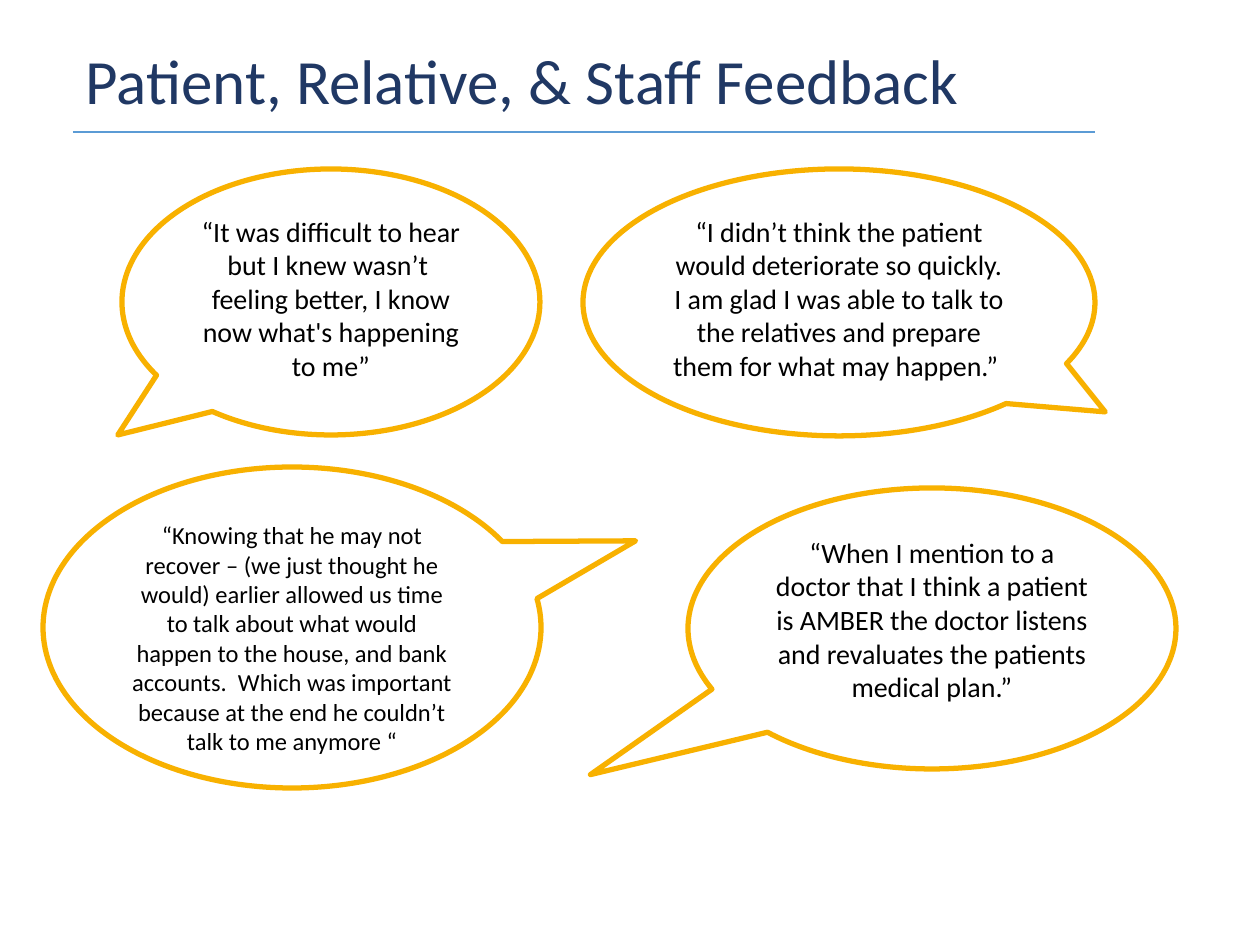
from dataclasses import dataclass

from lxml import etree
from pptx import Presentation
from pptx.dml.color import RGBColor
from pptx.enum.shapes import MSO_CONNECTOR, MSO_SHAPE
from pptx.enum.text import MSO_ANCHOR, PP_ALIGN
from pptx.oxml.ns import qn
from pptx.slide import Slide
from pptx.util import Emu, Pt

STRAIGHT = MSO_CONNECTOR.STRAIGHT
CALLOUT = MSO_SHAPE.OVAL_CALLOUT
TOP, MIDDLE = MSO_ANCHOR.TOP, MSO_ANCHOR.MIDDLE
LEFT, CENTER = PP_ALIGN.LEFT, PP_ALIGN.CENTER
PX_PER_INCH = 126
COLORS = {
    "white": "FFFFFF",
    "navy": "203864",
    "amber": "F8B100",
    "blue": "5B9BD5",
    "black": "000000",
}
FEEDBACK = [
    ((122, 169, 418, 266), (-0.51, 0.5), 16, [
        "“It was difficult to hear but I knew wasn’t  feeling better, "
        "I know now what's happening to me”",
    ]),
    ((688, 488, 488, 281), (-0.7, 0.52), 16, [
        "“When I mention to a doctor that I think a patient is AMBER "
        "the doctor listens and revaluates the patients medical plan.”",
    ]),
    ((583, 169, 512, 267), (0.52, 0.41), 16, [
        "“I didn’t think the patient would deteriorate so quickly.",
        "I am glad I was able to talk to the relatives and prepare "
        "them for what may happen.” ",
    ]),
    ((43, 467, 498, 321), (0.69, -0.27), 14, [
        "“Knowing that he may not recover – (we just thought he would) "
        "earlier allowed us time to talk about what would happen to the "
        "house, and bank accounts.  Which was important because at the "
        "end he couldn’t talk to me anymore “",
    ]),
]


def px(length):
    return Emu(round(length * 914400 / PX_PER_INCH))


def color(name):
    return RGBColor.from_string(COLORS[name])


@dataclass
class FeedbackPage:
    """Draws the feedback slide's elements in one shared style."""

    page: Slide
    font: str = "Calibri"

    def set_text(self, shape, lines, size, ink, align, anchor, spacing=None):
        frame = shape.text_frame
        frame.word_wrap = True
        frame.vertical_anchor = anchor
        frame.text = "\n".join(lines)
        for paragraph in frame.paragraphs:
            paragraph.alignment = align
            paragraph.line_spacing = spacing
            paragraph.font.name = self.font
            paragraph.font.size = Pt(size)
            paragraph.font.color.rgb = color(ink)

    def title(self, bounds, text):
        box = self.page.shapes.add_textbox(*map(px, bounds))
        self.set_text(box, [text], 36, "navy", LEFT, MIDDLE, 0.9)

    def rule(self, left, right, top):
        line = self.page.shapes.add_connector(
            STRAIGHT, px(left), px(top), px(right), px(top))
        line.line.color.rgb = color("blue")
        line.line.width = Pt(1.5)
        etree.SubElement(line._element.spPr, qn("a:effectLst"))

    def bubble(self, bounds, tail, size, lines):
        shape = self.page.shapes.add_shape(CALLOUT, *map(px, bounds))
        for index, offset in enumerate(tail):
            shape.adjustments[index] = offset
        shape.shadow.inherit = False
        shape.fill.solid()
        shape.fill.fore_color.rgb = color("white")
        shape.line.color.rgb = color("amber")
        shape.line.width = Pt(3)
        self.set_text(shape, lines, size, "black", CENTER, TOP)


def main():
    deck = Presentation()
    deck.slide_width, deck.slide_height = px(1260), px(945)
    feedback = FeedbackPage(deck.slides.add_slide(deck.slide_layouts[6]))
    feedback.title((73, 55, 993, 59), "Patient, Relative, & Staff Feedback")
    for bounds, tail, size, lines in FEEDBACK:
        feedback.bubble(bounds, tail, size, lines)
    feedback.rule(73, 1095, 132)
    deck.save("out.pptx")


if __name__ == "__main__":
    main()
